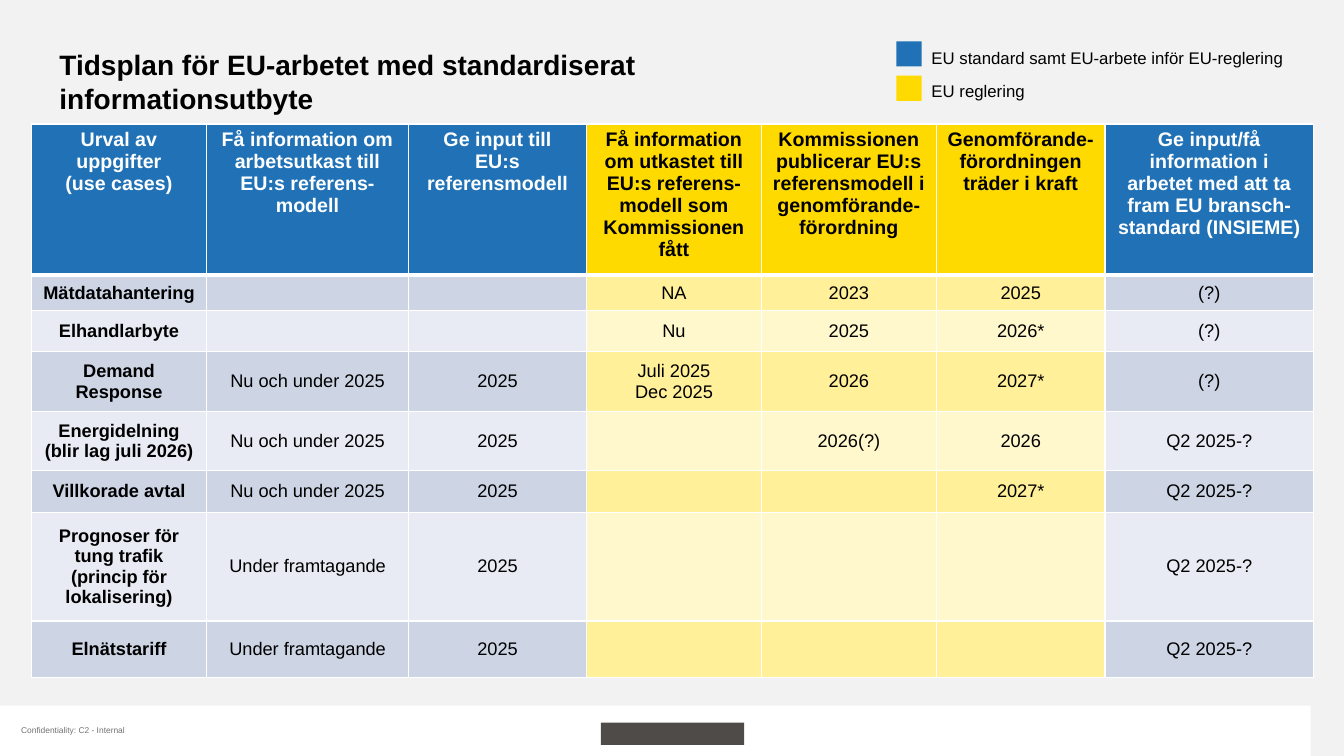
from dataclasses import dataclass

from lxml.etree import SubElement
from pptx import Presentation
from pptx.dml.color import RGBColor
from pptx.enum.shapes import MSO_SHAPE
from pptx.enum.text import MSO_ANCHOR, PP_ALIGN
from pptx.oxml.ns import qn
from pptx.shapes.autoshape import Shape
from pptx.slide import Slide
from pptx.table import _Cell
from pptx.util import Inches, Pt

FONT = "Arial"
BLACK = RGBColor(0x00, 0x00, 0x00)
WHITE = RGBColor(0xFF, 0xFF, 0xFF)
PANEL_GREY = RGBColor(0xF2, 0xF2, 0xF2)
FOOTER_GREY = RGBColor(0x73, 0x73, 0x73)
LOGO_GREY = RGBColor(0x4E, 0x4B, 0x48)
BLUE = RGBColor(0x20, 0x71, 0xB5)
YELLOW = RGBColor(0xFF, 0xDA, 0x00)
BLUE_BANDS = (RGBColor(0xCD, 0xD5, 0xE5), RGBColor(0xE8, 0xEB, 0xF3))
YELLOW_BANDS = (RGBColor(0xFF, 0xF0, 0x99), RGBColor(0xFF, 0xF8, 0xCC))

SLIDE_WIDTH, SLIDE_HEIGHT = 13.33, 7.5


@dataclass(frozen=True)
class Column:
    heading: str
    width: float
    regulation: bool = False


@dataclass(frozen=True)
class UseCase:
    height: float
    values: tuple[str, ...]


@dataclass(frozen=True)
class LegendEntry:
    label: str
    color: RGBColor
    swatch_top: float
    text_top: float


@dataclass(frozen=True)
class TextStyle:
    size: float
    color: RGBColor = BLACK
    bold: bool = False


HEADER_HEIGHT = 1.5
COLUMNS = (
    Column("Urval av uppgifter\n(use cases)", 1.74),
    Column("Få information om arbetsutkast till EU:s referens-modell", 2.0),
    Column("Ge input till EU:s\nreferensmodell", 1.77),
    Column("Få information om utkastet till EU:s referens-modell som Kommissionen fått", 1.73, True),
    Column("Kommissionen publicerar EU:s referensmodell i genomförande-förordning", 1.74, True),
    Column("Genomförande-förordningen träder i kraft", 1.67, True),
    Column("Ge input/få information i arbetet med att ta fram EU bransch-standard (INSIEME)", 2.07),
)
USE_CASES = (
    UseCase(0.35, ("Mätdatahantering", "", "", "NA", "2023", "2025", "(?)")),
    UseCase(0.41, ("Elhandlarbyte", "", "", "Nu", "2025", "2026*", "(?)")),
    UseCase(0.59, ("Demand Response", "Nu och under 2025", "2025", "Juli 2025\nDec 2025",
                   "2026", "2027*", "(?)")),
    UseCase(0.59, ("Energidelning\n(blir lag juli 2026)", "Nu och under 2025", "2025", "",
                   "2026(?)", "2026", "Q2 2025-?")),
    UseCase(0.41, ("Villkorade avtal", "Nu och under 2025", "2025", "", "", "2027*", "Q2 2025-?")),
    UseCase(1.08, ("Prognoser för tung trafik (princip för lokalisering)", "Under framtagande",
                   "2025", "", "", "", "Q2 2025-?")),
    UseCase(0.56, ("Elnätstariff", "Under framtagande", "2025", "", "", "", "Q2 2025-?")),
)
LEGEND = (
    LegendEntry("EU standard samt EU-arbete inför EU-reglering", BLUE, 0.41, 0.42),
    LegendEntry("EU reglering", YELLOW, 0.75, 0.75),
)


def format_text(holder: Shape | _Cell, text: str, style: TextStyle, alignment: PP_ALIGN) -> None:
    holder.text_frame.text = text
    for paragraph in holder.text_frame.paragraphs:
        paragraph.alignment = alignment
        for run in paragraph.runs:
            run.font.name = FONT
            run.font.size = Pt(style.size)
            run.font.bold = style.bold
            run.font.color.rgb = style.color
        if not paragraph.runs:
            end_properties = SubElement(paragraph._p, qn("a:endParaRPr"))
            end_properties.set("sz", str(int(style.size * 100)))


def paint(shape: Shape, color: RGBColor) -> None:
    shape.shadow.inherit = False
    shape.fill.solid()
    shape.fill.fore_color.rgb = color
    shape.line.fill.background()


def add_rectangle(slide: Slide, left: float, top: float, width: float, height: float,
                  color: RGBColor) -> None:
    rectangle = slide.shapes.add_shape(
        MSO_SHAPE.RECTANGLE, Inches(left), Inches(top), Inches(width), Inches(height))
    paint(rectangle, color)


def add_label(slide: Slide, left: float, top: float, width: float, height: float, text: str,
              style: TextStyle, insets: tuple[float, ...] = (0.1, 0.05, 0.1, 0.05)) -> None:
    label = slide.shapes.add_textbox(Inches(left), Inches(top), Inches(width), Inches(height))
    frame = label.text_frame
    frame.word_wrap = True
    frame.margin_left, frame.margin_top, frame.margin_right, frame.margin_bottom = map(Inches, insets)
    format_text(label, text, style, PP_ALIGN.LEFT)


def add_frame(slide: Slide) -> None:
    left, top, right, bottom = 0.26, 0.23, 13.07, 7.06
    builder = slide.shapes.build_freeform(0, 0, scale=Inches(1))
    builder.add_line_segments(
        [(SLIDE_WIDTH, 0), (SLIDE_WIDTH, SLIDE_HEIGHT), (0, SLIDE_HEIGHT)], close=True)
    builder.move_to(left, top)
    builder.add_line_segments([(left, bottom), (right, bottom), (right, top)], close=True)
    paint(builder.convert_to_shape(), WHITE)


def set_borders(cell: _Cell, top: float, bottom: float) -> None:
    properties = cell._tc.get_or_add_tcPr()
    for side, width in (("L", 1), ("R", 1), ("T", top), ("B", bottom)):
        line = SubElement(properties, qn(f"a:ln{side}"), w=str(Pt(width)))
        fill = SubElement(line, qn("a:solidFill"))
        SubElement(fill, qn("a:srgbClr"), val=str(WHITE))


def add_schedule(slide: Slide) -> None:
    heights = [HEADER_HEIGHT] + [use_case.height for use_case in USE_CASES]
    table = slide.shapes.add_table(
        len(heights), len(COLUMNS), Inches(0.31), Inches(1.23),
        Inches(sum(column.width for column in COLUMNS)), Inches(sum(heights))).table
    for row, height in zip(table.rows, heights):
        row.height = Inches(height)
    for column_index, column in enumerate(COLUMNS):
        table.columns[column_index].width = Inches(column.width)
        header = table.cell(0, column_index)
        set_borders(header, 1, 3)
        header.fill.solid()
        header.fill.fore_color.rgb = YELLOW if column.regulation else BLUE
        header_style = TextStyle(14, BLACK if column.regulation else WHITE, True)
        format_text(header, column.heading, header_style, PP_ALIGN.CENTER)
        bands = YELLOW_BANDS if column.regulation else BLUE_BANDS
        for row_index, use_case in enumerate(USE_CASES):
            cell = table.cell(row_index + 1, column_index)
            set_borders(cell, 3 if row_index == 0 else 1, 1)
            cell.fill.solid()
            cell.fill.fore_color.rgb = bands[row_index % 2]
            cell.vertical_anchor = MSO_ANCHOR.MIDDLE
            style = TextStyle(13, bold=column_index == 0)
            format_text(cell, use_case.values[column_index], style, PP_ALIGN.CENTER)


def main() -> None:
    presentation = Presentation()
    presentation.slide_width = Inches(SLIDE_WIDTH)
    presentation.slide_height = Inches(SLIDE_HEIGHT)
    slide = presentation.slides.add_slide(presentation.slide_layouts[6])
    slide.background.fill.solid()
    slide.background.fill.fore_color.rgb = PANEL_GREY

    add_frame(slide)
    add_rectangle(slide, 5.96, 7.17, 1.42, 0.22, LOGO_GREY)
    add_label(slide, 0.21, 7.19, 1.3, 0.1, "Confidentiality: C2 - Internal",
              TextStyle(6, FOOTER_GREY), (0, 0, 0, 0))
    add_schedule(slide)
    add_label(slide, 0.47, 0.4, 7.9, 0.82,
              "Tidsplan för EU-arbetet med standardiserat informationsutbyte",
              TextStyle(20, bold=True), (0.12, 0.07, 0.16, 0.05))
    for entry in LEGEND:
        add_rectangle(slide, 8.89, entry.swatch_top, 0.25, 0.25, entry.color)
        add_label(slide, 9.14, entry.text_top, 3.88, 0.3, entry.label, TextStyle(12))
    presentation.save("out.pptx")


if __name__ == "__main__":
    main()
